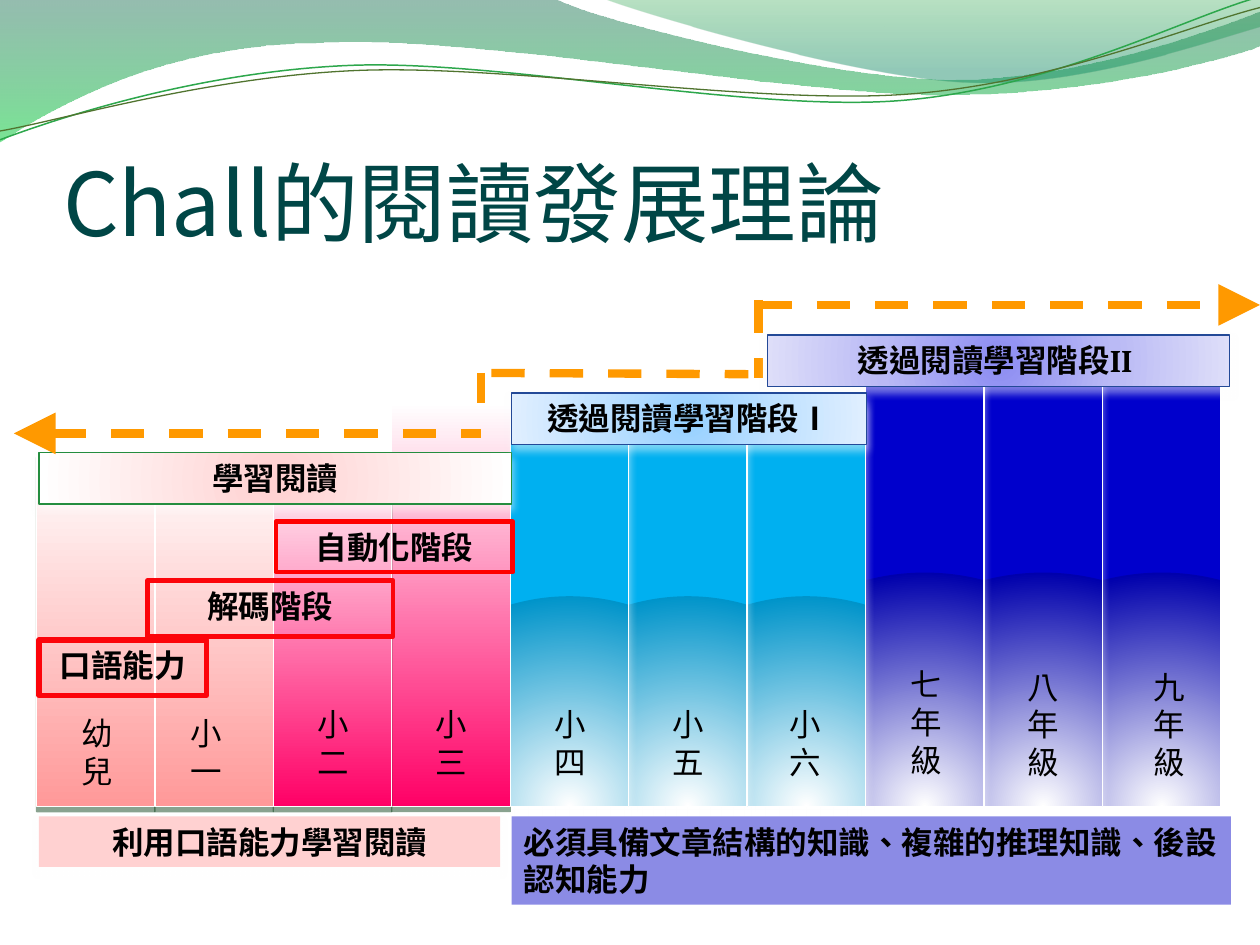
from pptx import Presentation
from pptx import util as u
from pptx.dml.color import RGBColor
from pptx.enum import dml, lang, shapes, text
from pptx.oxml import parse_xml
from pptx.oxml.ns import nsdecls, qn

BLACK = RGBColor(0, 0, 0)
WHITE = RGBColor(0xFF, 0xFF, 0xFF)
TEAL = RGBColor(0x00, 0x46, 0x46)
ORANGE = RGBColor(0xFF, 0x99, 0x00)
RED = RGBColor(0xFF, 0x00, 0x00)
BRIGHT_RED = RGBColor(0xFC, 0x04, 0x0A)
BLUE_EDGE = RGBColor(0x23, 0x49, 0x97)
GREEN_EDGE = RGBColor(0x24, 0x8D, 0x3F)
WAVE_GREEN = RGBColor(0x2D, 0xA7, 0x4C)
WAVE_OLIVE = RGBColor(0x50, 0x74, 0x2F)
PALE_PINK = RGBColor(0xFF, 0xD1, 0xD1)
DUSTY_PINK = RGBColor(0xDA, 0xAD, 0xAD)
SALMON = RGBColor(0xFF, 0x99, 0x99)
ROSE = RGBColor(0xFF, 0x00, 0x66)
LILAC = RGBColor(0x8B, 0x8B, 0xE5)
GREEN_SHADE = RGBColor(0x09, 0x3E, 0x16)

CYAN_STOPS = [(0, WHITE), (100, RGBColor(0, 0x94, 0xCA)), (100, RGBColor(0, 0xB0, 0xF0))]
NAVY_STOPS = [(0, WHITE), (100, RGBColor(0, 0, 0xAC)), (100, RGBColor(0, 0, 0xCC))]
PINK_STOPS = [(0, PALE_PINK), (100, WHITE), (100, DUSTY_PINK)]
SKY_STOPS = [(0, RGBColor(0x96, 0xD0, 0xFF)), (50, RGBColor(0xBF, 0xE1, 0xFF)),
             (100, RGBColor(0xE0, 0xEF, 0xFF))]
VIOLET_STOPS = [(0, RGBColor(0x8C, 0x8C, 0xF2)), (50, RGBColor(0xBA, 0xBA, 0xF5)),
                (100, RGBColor(0xDE, 0xDE, 0xF9))]
LINEAR = '<a:lin ang="5400000" scaled="0"/>'
RADIAL = '<a:path path="circle"><a:fillToRect l="50000" t="{}" r="50000" b="{}"/></a:path>'
FROM_MIDDLE = RADIAL.format(50000, 50000)
BELOW_MIDDLE = RADIAL.format(55000, 45000)
FROM_BOTTOM = RADIAL.format(100000, 0)


def set_gradient(shape, stops, course):
    marks = "".join(
        f'<a:gs pos="{position * 1000}"><a:srgbClr val="{color}">'
        f'<a:alpha val="{(alpha or [100])[0] * 1000}"/></a:srgbClr></a:gs>'
        for position, color, *alpha in stops)
    shape.fill.background()
    blank = shape.element.spPr.find(qn("a:noFill"))
    blank.getparent().replace(blank, parse_xml(
        f'<a:gradFill {nsdecls("a")} rotWithShape="1"><a:gsLst>{marks}</a:gsLst>{course}</a:gradFill>'))


def set_shadow(shape, color, blur):
    effects = shape.element.spPr.find(qn("a:effectLst"))
    effects.append(parse_xml(
        f'<a:outerShdw {nsdecls("a")} blurRad="{int(u.Pt(blur))}" dist="{int(u.Pt(3))}" '
        f'dir="5400000" rotWithShape="0"><a:srgbClr val="{color}">'
        f'<a:alpha val="48000"/></a:srgbClr></a:outerShdw>'))


def style_shape(shape, fill=None, stops=None, course=LINEAR, line=None, width=0.75,
                shade=None, blur=4.5):
    if stops:
        set_gradient(shape, stops, course)
    elif fill is not None:
        shape.fill.solid()
        shape.fill.fore_color.rgb = fill
    else:
        shape.fill.background()
    if line is None:
        shape.line.fill.background()
    else:
        shape.line.color.rgb = line
        shape.line.width = u.Pt(width)
    shape.shadow.inherit = False
    if shade is not None:
        set_shadow(shape, shade, blur)


def write_text(box, content, font="Cambria", size=18, color=BLACK, bold=True,
               align=text.PP_ALIGN.CENTER, anchor=text.MSO_ANCHOR.TOP,
               fit=text.MSO_AUTO_SIZE.SHAPE_TO_FIT_TEXT):
    frame = box.text_frame
    frame.text = content
    frame.word_wrap = True
    frame.auto_size = fit
    frame.vertical_anchor = anchor
    for para in frame.paragraphs:
        para.alignment = align
        for span in para.runs:
            span.font.name = font
            span.font.size = u.Pt(size)
            span.font.bold = bold
            span.font.color.rgb = color
            span.font.language_id = lang.MSO_LANGUAGE_ID.TRADITIONAL_CHINESE


def add_rectangle(page, place, **style):
    box = page.shapes.add_shape(shapes.MSO_SHAPE.RECTANGLE, *map(u.Inches, place))
    style_shape(box, **style)
    return box


def add_label(page, content, place, align=text.PP_ALIGN.CENTER, **style):
    write_text(add_rectangle(page, place, **style), content, align=align)


def add_grade(page, content, left, top, width=0.45):
    height = 0.1 + 0.3 * len(content.replace("\n", ""))
    box = page.shapes.add_textbox(*map(u.Inches, (left, top, width, height)))
    write_text(box, content, font="Arial", bold=False, align=text.PP_ALIGN.LEFT)


def add_dashes(page, start, end, arrow=None):
    line = page.shapes.add_connector(
        shapes.MSO_CONNECTOR.STRAIGHT, *map(u.Inches, start + end))
    line.line.color.rgb = ORANGE
    line.line.width = u.Pt(4.75)
    line.line.dash_style = dml.MSO_LINE.DASH
    properties = line.element.spPr
    if arrow:
        properties.find(qn("a:ln")).append(
            parse_xml(f'<a:{arrow} {nsdecls("a")} type="triangle" w="lg" len="lg"/>'))
    properties.append(parse_xml(f'<a:effectLst {nsdecls("a")}/>'))


def bend_segments(shape, parts):
    segments = iter(list(shape.element.spPr.iter(qn("a:lnTo"))))
    for part in parts:
        pieces = [next(segments) for _ in part]
        if len(part) == 3:
            curve = parse_xml(f'<a:cubicBezTo {nsdecls("a")}/>')
            pieces[0].addprevious(curve)
            for piece in pieces:
                curve.append(piece[0])
                piece.getparent().remove(piece)


def add_wave(page, start, *parts, close=False, **style):
    corners = [start] + [corner for part in parts for corner in part]
    corners = [(u.Inches(x), u.Inches(y)) for x, y in corners]
    builder = page.shapes.build_freeform(*corners[0])
    builder.add_line_segments(corners[1:], close=close)
    wave = builder.convert_to_shape()
    bend_segments(wave, parts)
    style_shape(wave, **style)


def add_waves(page):
    add_wave(page, (0, -0.01), ((4.4, -0.01),),
             ((4.76, 0.17), (6.64, 0.63), (7.58, 0.63)),
             ((8.53, 0.63), (9.58, 0.26), (10, 0.09)), ((10.01, 0.36),),
             ((9.83, 0.44), (8.7, 0.76), (7.46, 0.75)),
             ((6.22, 0.75), (3.82, 0.28), (2.57, 0.34)),
             ((1.29, 0.35), (0.46, 0.83), (-0.01, 1.13)), close=True,
             stops=[(0, RGBColor(0x15, 0x6C, 0x4F), 45), (100, RGBColor(0x0C, 0xCE, 0x3D), 55)])
    add_wave(page, (4.79, -0.01), ((5.09, 0.11), (6.82, 0.62), (7.69, 0.65)),
             ((8.56, 0.69), (9.61, 0.32), (10, 0.21)), ((10, 0),), close=True,
             stops=[(0, RGBColor(0x16, 0x9B, 0x38), 30), (80, RGBColor(0x10, 0x89, 0x62), 45)])
    add_wave(page, (0, 1.11), ((0.48, 0.93), (1.58, 0.57), (2.77, 0.52)),
             ((3.95, 0.47), (5.93, 0.89), (7.13, 0.8)),
             ((8.33, 0.71), (9.38, 0.15), (9.98, -0.02)), line=WAVE_GREEN, width=0.85)
    add_wave(page, (0, 1.04), ((0.47, 0.96), (1.64, 0.61), (2.83, 0.56)),
             ((4.03, 0.51), (5.97, 0.83), (7.17, 0.75)),
             ((8.36, 0.67), (9.41, 0.21), (10, 0.06)), line=WAVE_OLIVE)


def add_bars(page):
    salmon = (3.59, [(0, WHITE), (100, SALMON)], LINEAR, GREEN_SHADE, 0)
    rose = (3.59, [(0, WHITE), (100, ROSE)], LINEAR, GREEN_SHADE, 0)
    cyan = (3.2, CYAN_STOPS, FROM_BOTTOM, WHITE, 4.5)
    navy = (2.81, NAVY_STOPS, FROM_BOTTOM, WHITE, 4.5)
    bars = [salmon] * 2 + [rose, (3.2,) + rose[1:]] + [cyan] * 3 + [navy] * 3
    for index in [0] + list(range(9, 0, -1)):
        top, stops, course, shade, blur = bars[index]
        add_rectangle(page, (0.29 + 0.94 * index, top, 0.94, 6.4 - top), stops=stops,
                      course=course, line=WHITE, shade=shade, blur=blur)


def add_title(page, content):
    title = page.shapes.title
    title.left, title.top, title.width, title.height = map(u.Inches, (0.5, 0.77, 9.08, 1.25))
    write_text(title, content, font="Noto Sans CJK SC", size=50, color=TEAL, bold=False,
               align=text.PP_ALIGN.LEFT, anchor=text.MSO_ANCHOR.BOTTOM,
               fit=text.MSO_AUTO_SIZE.NONE)
    frame = title.text_frame
    frame.margin_left = frame.margin_right = frame.margin_bottom = 0
    frame.margin_top = u.Inches(0.05)
    page.shapes.element.append(title.element)


def main():
    deck = Presentation()
    deck.slide_width, deck.slide_height = u.Inches(10), u.Inches(7.5)
    page = deck.slides.add_slide(deck.slide_layouts[5])
    add_waves(page)
    add_dashes(page, (3.9, 2.96), (5.94, 2.97))
    add_dashes(page, (6.02, 2.42), (10, 2.42), arrow="tailEnd")
    add_dashes(page, (3.82, 2.96), (3.82, 3.51))
    add_dashes(page, (6.02, 2.38), (6.02, 3))
    add_bars(page)
    add_label(page, "學習閱讀", (0.31, 3.59, 3.75, 0.41), stops=PINK_STOPS,
              course=BELOW_MIDDLE, line=GREEN_EDGE, shade=WHITE)
    add_label(page, "透過閱讀學習階段II ", (6.09, 2.66, 3.67, 0.41), stops=VIOLET_STOPS,
              course=FROM_MIDDLE, line=BLUE_EDGE, shade=WHITE)
    add_dashes(page, (0.11, 3.44), (3.82, 3.44), arrow="headEnd")
    add_grade(page, "小\n一", 1.41, 5.62)
    for index, number in enumerate("二三四五"):
        add_grade(page, f"小\n{number}", 2.42 + 0.94 * index, 5.55)
    add_label(page, "自動化階段", (2.19, 4.14, 1.88, 0.4), line=RED, width=2.75)
    add_grade(page, "小\n六", 6.17, 5.55, width=0.39)
    add_grade(page, "七\n年\n級", 7.13, 5.23)
    add_grade(page, "八\n年\n級", 8.06, 5.25)
    add_grade(page, "九年級", 9.06, 5.25, width=0.39)
    add_grade(page, "幼\n兒", 0.55, 5.62)
    add_label(page, "口語能力", (0.31, 5.08, 1.33, 0.44), line=BRIGHT_RED, width=3)
    add_label(page, "解碼階段", (1.17, 4.61, 1.95, 0.44), line=BRIGHT_RED, width=2.75)
    add_label(page, "利用口語能力學習閱讀", (0.31, 6.48, 3.66, 0.4),
              fill=PALE_PINK, shade=WHITE)
    add_title(page, "Chall的閱讀發展理論")
    add_label(page, "必須具備文章結構的知識、複雜的推理知識、後設認知能力",
              (4.06, 6.48, 5.71, 0.7), align=text.PP_ALIGN.LEFT, fill=LILAC, shade=WHITE)
    add_label(page, "透過閱讀學習階段Ⅰ", (4.06, 3.12, 2.82, 0.41), stops=SKY_STOPS,
              course=FROM_MIDDLE, line=BLUE_EDGE, shade=WHITE)
    deck.save("out.pptx")


if __name__ == "__main__":
    main()
